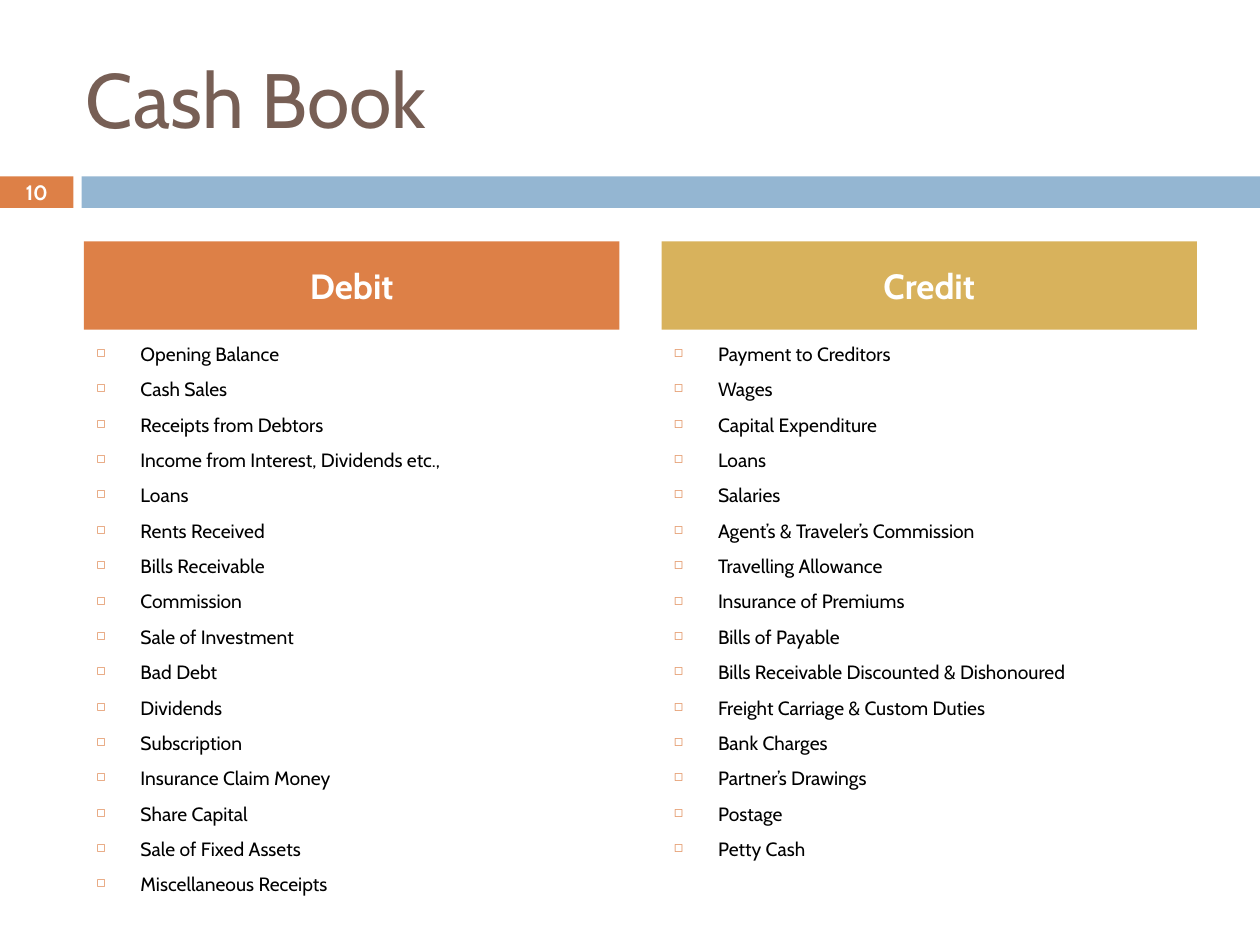
from lxml.etree import SubElement
from pptx import Presentation
from pptx.dml.color import RGBColor
from pptx.enum.shapes import MSO_SHAPE
from pptx.enum.text import MSO_ANCHOR, PP_ALIGN
from pptx.oxml.ns import qn
from pptx.util import Pt

FONT = "Cabin"
COLORS = {
    "title": "775F55",
    "orange": "DD8047",
    "blue": "94B6D2",
    "gold": "D8B25C",
    "white": "FFFFFF",
    "black": "000000",
}
DEBIT = [
    "Opening Balance",
    "Cash Sales",
    "Receipts from Debtors",
    "Income from Interest, Dividends etc.,",
    "Loans",
    "Rents Received",
    "Bills Receivable",
    "Commission",
    "Sale of Investment",
    "Bad Debt",
    "Dividends",
    "Subscription",
    "Insurance Claim Money",
    "Share Capital",
    "Sale of Fixed Assets",
    "Miscellaneous Receipts",
]
CREDIT = [
    "Payment to Creditors",
    "Wages",
    "Capital Expenditure",
    "Loans",
    "Salaries",
    "Agent’s & Traveler’s Commission",
    "Travelling Allowance",
    "Insurance of Premiums",
    "Bills of Payable",
    "Bills Receivable Discounted & Dishonoured",
    "Freight Carriage & Custom Duties",
    "Bank Charges",
    "Partner’s Drawings",
    "Postage",
    "Petty Cash",
]


def rgb(name):
    return RGBColor.from_string(COLORS[name])


def add_bar(slide, x, y, w, h, color):
    sp = slide.shapes.add_shape(MSO_SHAPE.RECTANGLE, Pt(x), Pt(y), Pt(w), Pt(h))
    sp.shadow.inherit = False
    sp.fill.solid()
    sp.fill.fore_color.rgb = rgb(color)
    sp.line.fill.background()
    return sp


def add_box(slide, x, y, w, h):
    return slide.shapes.add_textbox(Pt(x), Pt(y), Pt(w), Pt(h))


def write(sp, lines, size, color, bold=False, align=PP_ALIGN.LEFT, anchor=MSO_ANCHOR.MIDDLE):
    tf = sp.text_frame
    tf.word_wrap = True
    tf.vertical_anchor = anchor
    tf.text = "\n".join(lines)
    for p in tf.paragraphs:
        p.alignment = align
        for r in p.runs:
            r.font.name = FONT
            r.font.size = Pt(size)
            r.font.bold = bold
            r.font.color.rgb = rgb(color)
    return tf


def add_bullet(p, indent):
    p.space_before = Pt(7)
    pPr = p._p.get_or_add_pPr()
    pPr.set("marL", str(Pt(indent)))
    pPr.set("indent", str(-Pt(indent)))
    clr = SubElement(pPr, qn("a:buClr"))
    SubElement(clr, qn("a:srgbClr"), val=COLORS["orange"])
    SubElement(pPr, qn("a:buSzPct"), val="60000")
    SubElement(pPr, qn("a:buChar"), char="◻")


def add_title(slide, x, y, w, h, text):
    write(add_box(slide, x, y, w, h), [text], 44, "title")


def add_number_strip(slide, x, y, w, h, number):
    tab_w, gap = 42, 4.7
    add_bar(slide, x, y, tab_w, h, "orange")
    add_bar(slide, x + tab_w + gap, y, w - tab_w - gap, h, "blue")
    sp = add_box(slide, x, y - 0.7, tab_w, h + 1.4)
    write(sp, [number], 11.9, "white", True, PP_ALIGN.CENTER)


def add_column(slide, x, y, w, h, heading, color, items):
    head_h, gap = 50.4, 3.6
    sp = add_bar(slide, x, y, w, head_h, color)
    write(sp, [heading], 20, "white", True, PP_ALIGN.CENTER)
    list_y = head_h + gap
    sp = add_box(slide, x, y + list_y, w, h - list_y)
    tf = write(sp, items, 11, "black", anchor=MSO_ANCHOR.TOP)
    for p in tf.paragraphs:
        add_bullet(p, 25.2)


def main():
    prs = Presentation()
    prs.slide_width, prs.slide_height = Pt(720), Pt(540)
    slide = prs.slides.add_slide(prs.slide_layouts[6])
    add_title(slide, 42, 21.6, 642, 68.4, "Cash Book")
    add_number_strip(slide, 0, 100.8, 720, 18, "10")
    left, col_w, gap = 48, 306, 24
    columns = [("Debit", "orange", DEBIT), ("Credit", "gold", CREDIT)]
    for i, (heading, color, items) in enumerate(columns):
        add_column(slide, left + i * (col_w + gap), 138, col_w, 336, heading, color, items)
    prs.save("out.pptx")


if __name__ == "__main__":
    main()
